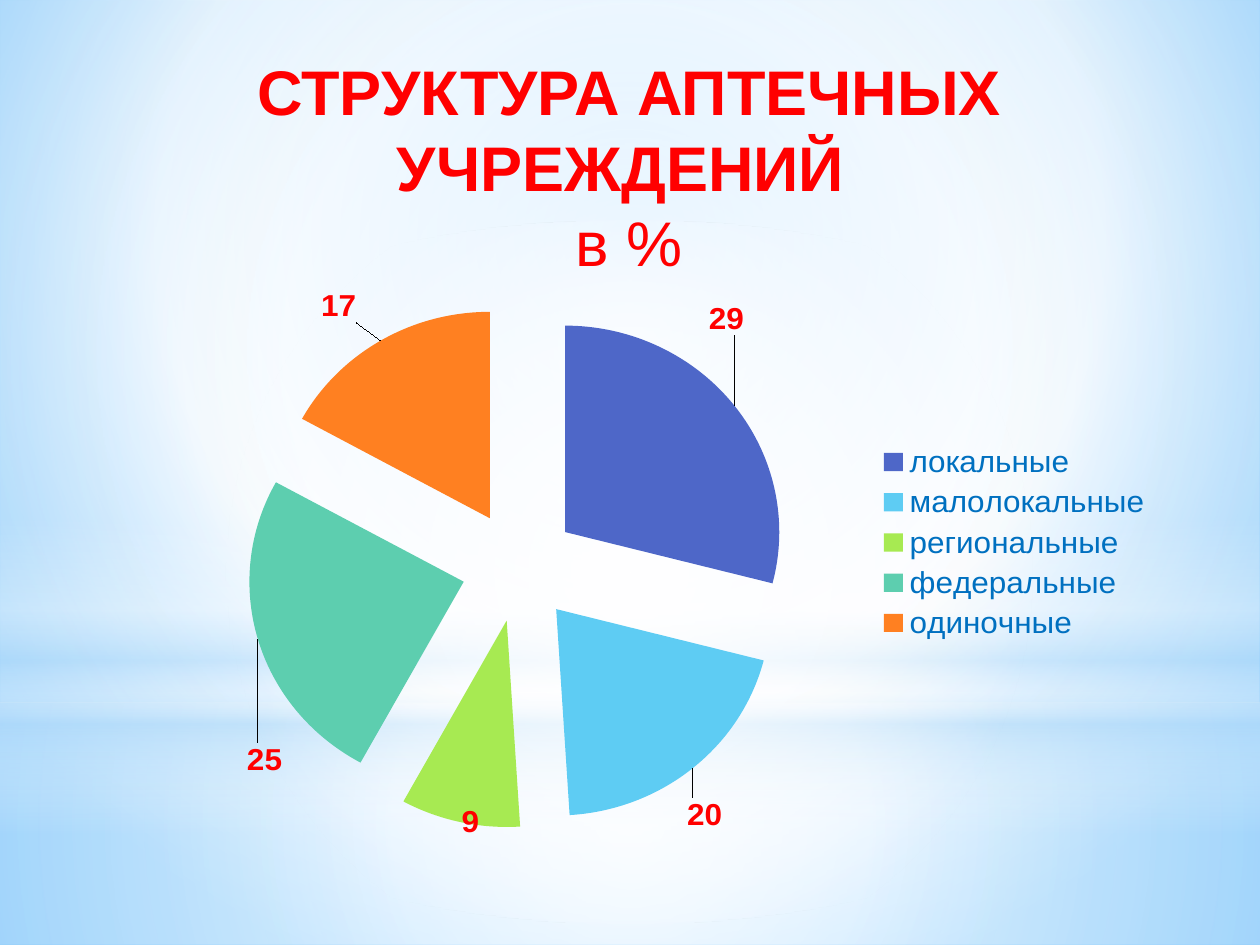
import pptx
import pptx.chart.data
import pptx.dml.color
import pptx.enum.chart
import pptx.enum.shapes
import pptx.enum.text
import pptx.oxml
import pptx.oxml.ns
import pptx.util
from pptx.util import Cm

RGBColor = pptx.dml.color.RGBColor
RED = RGBColor(0xFF, 0x00, 0x00)
LEGEND_BLUE = RGBColor(0x00, 0x70, 0xC0)
WHITE = RGBColor(0xFF, 0xFF, 0xFF)
PALE_BLUE = RGBColor(0xB4, 0xDC, 0xFA)
SKY = RGBColor(0x9E, 0xD5, 0xFF)
DEEP_SKY = RGBColor(0x5B, 0xB9, 0xFF)
BLACK = RGBColor(0x00, 0x00, 0x00)

CENTRE = (50, 50, 50, 50)
RECTANGLE = pptx.enum.shapes.MSO_SHAPE.RECTANGLE
OVAL = pptx.enum.shapes.MSO_SHAPE.OVAL

# Category, value, slice colour, label shift as a share of the chart
SLICES = [
    ("локальные", 29, RGBColor(0x4E, 0x67, 0xC8), (-0.03, -0.11)),
    ("малолокальные", 20, RGBColor(0x5E, 0xCC, 0xF3), (-0.01, 0.04)),
    ("региональные ", 9, RGBColor(0xA7, 0xEA, 0x52), (0.02, -0.04)),
    ("федеральные", 25, RGBColor(0x5D, 0xCE, 0xAF), (0.03, 0.17)),
    ("одиночные", 17, RGBColor(0xFF, 0x80, 0x21), (-0.02, -0.02)),
]


def set_gradient(fill, parent, stops, centre=None):
    """Give parent a gradient: circular around centre, or top to bottom.

    Each stop is (position, colour, opacity), all numbers in percent.
    """
    fill.solid()
    solid = parent.find(pptx.oxml.ns.qn("a:solidFill"))
    stop_xml = "".join(
        f'<a:gs pos="{position * 1000}"><a:srgbClr val="{color}">'
        f'<a:alpha val="{opacity * 1000}"/></a:srgbClr></a:gs>'
        for position, color, opacity in stops
    )
    if centre:
        left, top, right, bottom = (side * 1000 for side in centre)
        direction = (f'<a:path path="circle"><a:fillToRect l="{left}" t="{top}" '
                     f'r="{right}" b="{bottom}"/></a:path>')
    else:
        direction = '<a:lin ang="5400000" scaled="0"/>'
    gradient = pptx.oxml.parse_xml(
        f'<a:gradFill {pptx.oxml.ns.nsdecls("a")} rotWithShape="1">'
        f'<a:gsLst>{stop_xml}</a:gsLst>{direction}</a:gradFill>'
    )
    parent.replace(solid, gradient)


def add_glow(slide, kind, top, height, stops, centre=None):
    shape = slide.shapes.add_shape(kind, 0, Cm(top), Cm(25.4), Cm(height))
    shape.shadow.inherit = False
    shape.line.fill.background()
    set_gradient(shape.fill, shape._element.spPr, stops, centre)


def add_backdrop(slide):
    fill = slide.background.fill
    fill.solid()
    properties = slide._element.cSld.bg.bgPr
    set_gradient(fill, properties,
                 [(0, SKY, 100), (60, WHITE, 100), (100, DEEP_SKY, 100)],
                 (20, 10, 20, 60))
    add_glow(slide, RECTANGLE, 14.17, 4.88,
             [(0, WHITE, 91), (37, WHITE, 76), (100, PALE_BLUE, 79)], CENTRE)
    add_glow(slide, RECTANGLE, 0, 14.17,
             [(0, WHITE, 89), (48, WHITE, 62), (100, PALE_BLUE, 79)], CENTRE)
    add_glow(slide, RECTANGLE, 10.46, 6.35,
             [(0, WHITE, 0), (29, WHITE, 30), (45, PALE_BLUE, 40),
              (55, WHITE, 26), (65, PALE_BLUE, 60), (100, WHITE, 0)])
    add_glow(slide, OVAL, 4.45, 14.17, [(0, WHITE, 100), (56, WHITE, 0)], CENTRE)


def set_font(font, size, color, bold=False):
    font.name = "Arial"
    font.size = pptx.util.Pt(size)
    font.bold = bold
    font.color.rgb = color


def manual_layout(x, y, extra=""):
    return pptx.oxml.parse_xml(
        f'<c:layout {pptx.oxml.ns.nsdecls("c")}><c:manualLayout>{extra}'
        f'<c:x val="{x}"/><c:y val="{y}"/></c:manualLayout></c:layout>'
    )


def place_plot(chart, x, y, width, height):
    plot_area = chart._chartSpace.chart.plotArea
    for layout in plot_area.findall(pptx.oxml.ns.qn("c:layout")):
        plot_area.remove(layout)
    layout = manual_layout(
        x, y, '<c:layoutTarget val="inner"/><c:xMode val="edge"/><c:yMode val="edge"/>')
    for tag, value in (("c:w", width), ("c:h", height)):
        size = pptx.oxml.parse_xml(
            f'<{tag} {pptx.oxml.ns.nsdecls("c")} val="{value}"/>')
        layout[0].append(size)
    plot_area.insert(0, layout)


def explode(series, percent):
    name = series._element.find(pptx.oxml.ns.qn("c:tx"))
    name.addnext(pptx.oxml.parse_xml(
        f'<c:explosion {pptx.oxml.ns.nsdecls("c")} val="{percent}"/>'))


def style_slice(series, index, color, shift):
    point = series.points[index]
    point.format.fill.solid()
    point.format.fill.fore_color.rgb = color
    label = point.data_label
    set_font(label.font, 18, RED, bold=True)
    label.position = pptx.enum.chart.XL_LABEL_POSITION.OUTSIDE_END
    label_element = series.data_labels._element.findall(
        pptx.oxml.ns.qn("c:dLbl"))[index]
    label_element[0].addnext(manual_layout(*shift))


def add_pie(slide):
    data = pptx.chart.data.CategoryChartData()
    data.categories = [name for name, *_ in SLICES]
    data.add_series("Series 1", [value for _, value, *_ in SLICES])
    chart = slide.shapes.add_chart(
        pptx.enum.chart.XL_CHART_TYPE.PIE,
        Cm(2.49), Cm(4.93), Cm(21), Cm(12.47), data).chart
    chart.has_title = False
    chart.font.name = "Lato"
    chart.font.size = pptx.util.Pt(18)
    chart.font.color.rgb = BLACK
    chart.has_legend = True
    chart.legend.position = pptx.enum.chart.XL_LEGEND_POSITION.RIGHT
    chart.legend.include_in_layout = False
    set_font(chart.legend.font, 18, LEGEND_BLUE)
    place_plot(chart, 0.02, 0.1, 0.72, 0.88)

    plot = chart.plots[0]
    plot.vary_by_categories = True
    series = plot.series[0]
    explode(series, 27)
    series.data_labels.show_value = True
    set_font(series.data_labels.font, 18, RED, bold=True)
    for index, (_, _, color, shift) in enumerate(SLICES):
        style_slice(series, index, color, shift)


def add_title(slide):
    box = slide.shapes.add_textbox(Cm(2.49), Cm(0.91), Cm(20.4), Cm(4.88))
    frame = box.text_frame
    frame.word_wrap = True
    frame.vertical_anchor = pptx.enum.text.MSO_ANCHOR.MIDDLE
    frame.text = "СТРУКТУРА АПТЕЧНЫХ УЧРЕЖДЕНИЙ \nв %"
    for paragraph, bold in zip(frame.paragraphs, (True, False)):
        paragraph.alignment = pptx.enum.text.PP_ALIGN.CENTER
        set_font(paragraph.font, 36, RED, bold)


def main():
    presentation = pptx.Presentation()
    presentation.slide_width = Cm(25.4)
    presentation.slide_height = Cm(19.05)
    slide = presentation.slides.add_slide(presentation.slide_layouts[6])
    add_backdrop(slide)
    add_pie(slide)
    add_title(slide)
    presentation.save("out.pptx")


if __name__ == "__main__":
    main()
